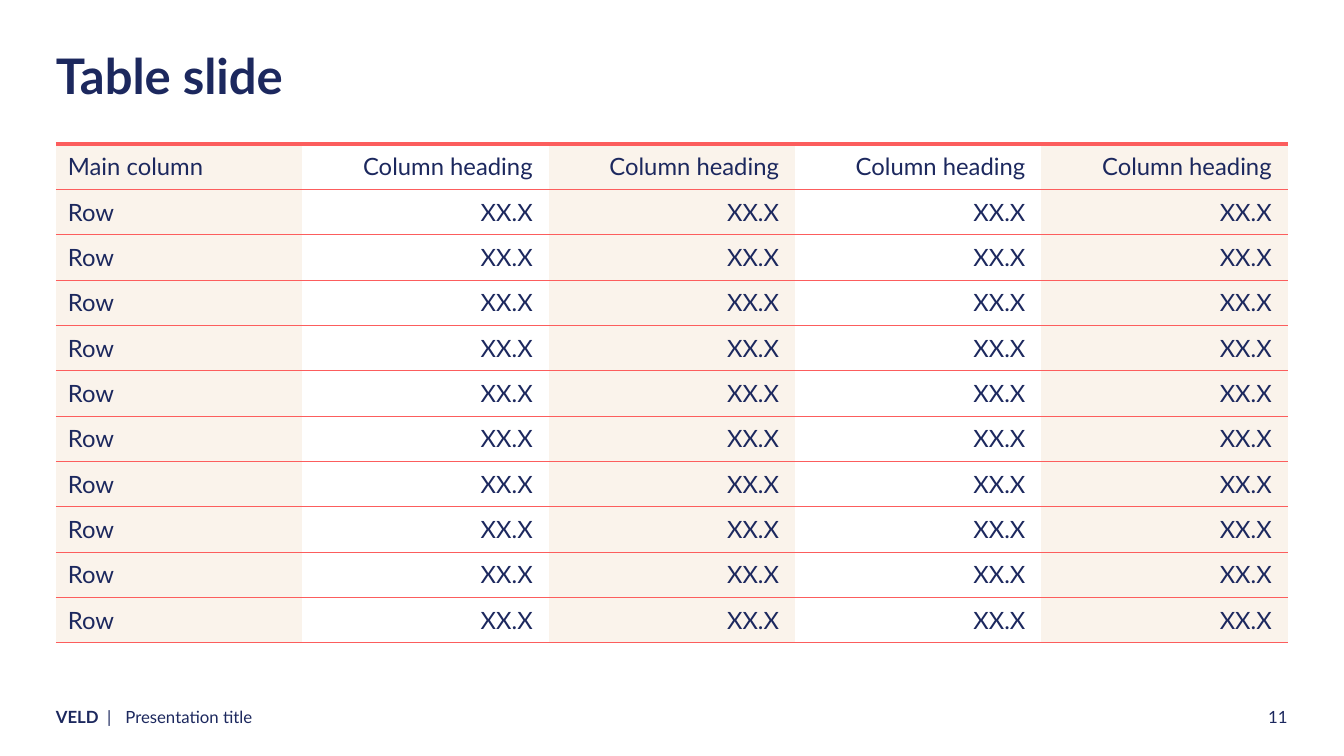
from pptx import Presentation
from pptx.dml.color import RGBColor
from pptx.enum.text import MSO_ANCHOR, PP_ALIGN
from pptx.oxml.ns import qn
from pptx.util import Cm, Pt
from lxml.etree import SubElement

NAVY, CORAL, CREAM, WHITE = "1C285E", "FC5D5D", "FAF3EB", "FFFFFF"
LEFT, FOOTER_TOP, FOOTER_HEIGHT = 1.41, 17.81, 0.51
HEADINGS = ["Main column"] + ["Column heading"] * 4
ROWS = [["Row"] + ["XX.X"] * 4] * 10


def color(value):
    return RGBColor.from_string(value)


def add_run(p, text, size, bold=False):
    r = p.add_run()
    r.text = text
    r.font.name = "Lato"
    r.font.size = Pt(size)
    r.font.bold = bold
    r.font.color.rgb = color(NAVY)


def add_text(s, left, top, width, height, runs, size, align=PP_ALIGN.LEFT, spacing=1.0):
    tf = s.shapes.add_textbox(Cm(left), Cm(top), Cm(width), Cm(height)).text_frame
    tf.word_wrap = True
    tf.margin_left = tf.margin_top = tf.margin_right = tf.margin_bottom = 0
    p = tf.paragraphs[0]
    p.alignment = align
    p.line_spacing = spacing
    for text, bold in runs:
        add_run(p, text, size, bold)


def set_border(cell, side, width=0):
    ln = SubElement(cell._tc.get_or_add_tcPr(), qn(f"a:ln{side}"), w=str(Pt(width)))
    if width:
        fill = SubElement(ln, qn("a:solidFill"))
        SubElement(fill, qn("a:srgbClr"), val=CORAL)
    else:
        SubElement(ln, qn("a:noFill"))


def fill_cell(cell, text, fill, align, top_width):
    for side, width in (("L", 0), ("R", 0), ("T", top_width), ("B", 0.5)):
        set_border(cell, side, width)
    cell.fill.solid()
    cell.fill.fore_color.rgb = color(fill)
    cell.vertical_anchor = MSO_ANCHOR.MIDDLE
    cell.margin_left, cell.margin_right = Cm(0.3), Cm(0.4)
    cell.margin_top = cell.margin_bottom = Cm(0.2)
    p = cell.text_frame.paragraphs[0]
    p.alignment = align
    add_run(p, text, 17)


def add_data_table(s, left, top, width, height, rows):
    table = s.shapes.add_table(
        len(rows), len(rows[0]), Cm(left), Cm(top), Cm(width), Cm(height)
    ).table
    table.first_row = table.horz_banding = False
    for i, row in enumerate(rows):
        for j, text in enumerate(row):
            fill = WHITE if j % 2 else CREAM
            align = PP_ALIGN.RIGHT if j else PP_ALIGN.LEFT
            fill_cell(table.cell(i, j), text, fill, align, 0.5 if i else 3)


def main():
    prs = Presentation()
    prs.slide_width, prs.slide_height = Cm(33.87), Cm(19.05)
    s = prs.slides.add_slide(prs.slide_layouts[6])
    add_text(s, LEFT, FOOTER_TOP, 1.75, FOOTER_HEIGHT, [("VELD ", True), (" |", False)], 12)
    add_text(s, LEFT, 1.32, 30.05, 1.7, [("Table slide", True)], 35, spacing=0.9)
    add_data_table(s, LEFT, 3.63, 31.04, 12.57, [HEADINGS] + ROWS)
    add_text(s, 3.16, FOOTER_TOP, 11.53, FOOTER_HEIGHT, [("Presentation title", False)], 12)
    add_text(s, 29.96, FOOTER_TOP, 2.49, FOOTER_HEIGHT, [("11", False)], 12, PP_ALIGN.RIGHT)
    prs.save("out.pptx")


if __name__ == "__main__":
    main()
